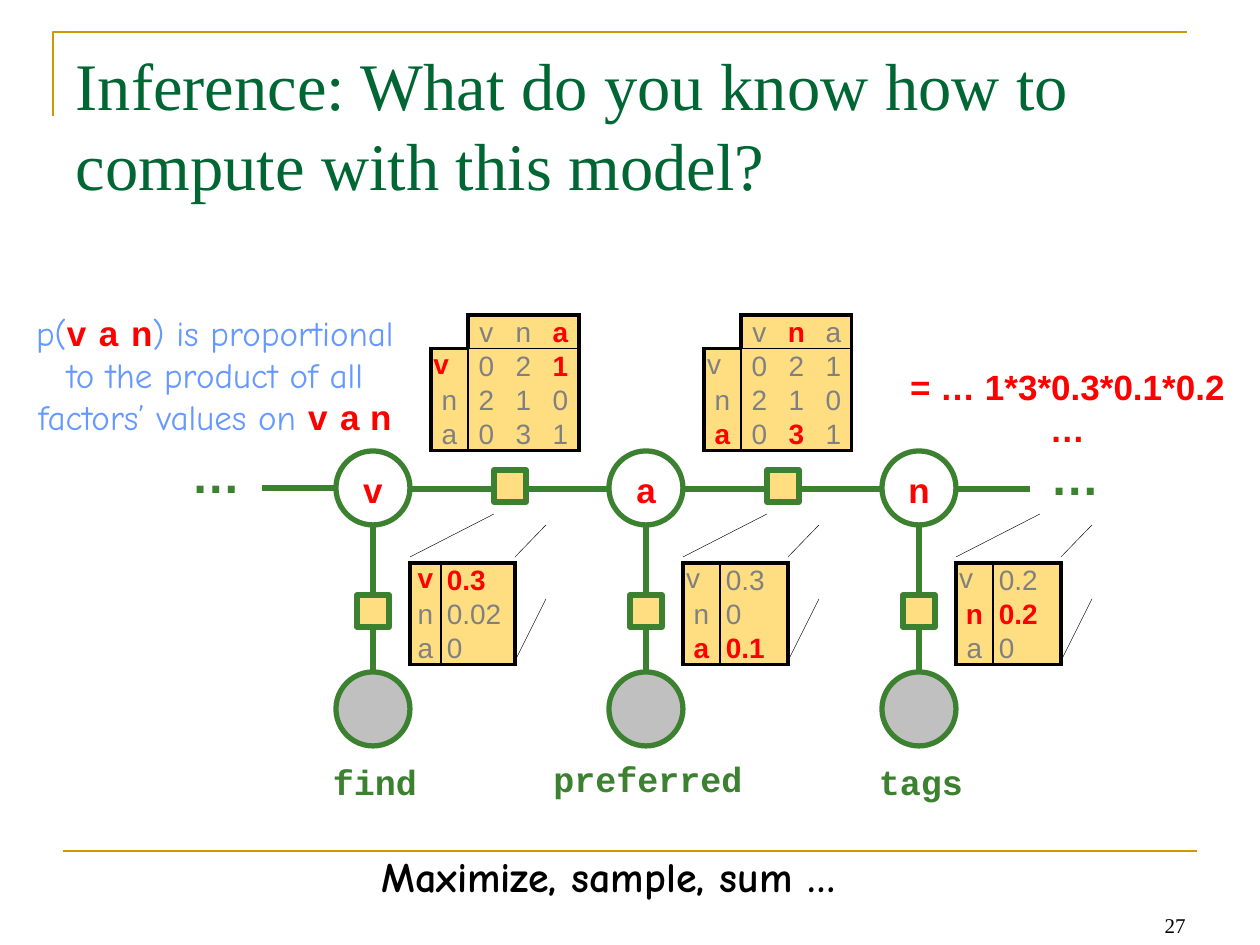
import pptx
import pptx.util
import pptx.dml.color
import pptx.enum.shapes
import pptx.enum.text
import pptx.oxml

PX = 914400 // 126
GREEN, YELLOW, GOLD, RED = "3B812F", "FFDE81", "CC9900", "FF0000"
GRAY, BLUE, BLACK = "808080", "6699FF", "000000"
SANS, MONO, HAND, SERIF = "Arial", "Courier New", "Comic Neue", "Times New Roman"
SHAPE = pptx.enum.shapes.MSO_SHAPE
ALIGN = pptx.enum.text.PP_ALIGN
ANCHOR = pptx.enum.text.MSO_ANCHOR
MARGINS = ("margin_left", "margin_top", "margin_right", "margin_bottom")
NAMESPACE = "http://schemas.openxmlformats.org/drawingml/2006/main"
COLUMN_STEP = 273


def px(*lengths):
    return [length * PX for length in lengths]


def rgb(color):
    return pptx.dml.color.RGBColor.from_string(color)


def write(para, spans, align=ALIGN.CENTER):
    """Fill a paragraph with (text, size, font, color, bold) spans."""
    para.alignment = align
    para.line_spacing = pptx.util.Pt(1.2 * max(span[1] for span in spans))
    for text, size, font, color, bold in spans:
        if text == "\n":
            para.add_line_break()
            continue
        span = para.add_run()
        span.text = text
        values = {"size": pptx.util.Pt(size), "name": font, "bold": bold}
        for name, value in values.items():
            setattr(span.font, name, value)
        span.font.color.rgb = rgb(color)


def add_text(page, box, paragraphs, wrap=False, align=ALIGN.CENTER, anchor=ANCHOR.TOP):
    frame = page.shapes.add_textbox(*px(*box)).text_frame
    frame.word_wrap = wrap
    frame.vertical_anchor = anchor
    for index, spans in enumerate(paragraphs):
        para = frame.add_paragraph() if index else frame.paragraphs[0]
        write(para, spans, align)
    return frame


def add_line(page, start, end, color=GREEN, width=3):
    line = page.shapes.add_connector(
        pptx.enum.shapes.MSO_CONNECTOR.STRAIGHT, *px(*start, *end))
    line.line.color.rgb = rgb(color)
    line.line.width = pptx.util.Pt(width)
    line._element.spPr.append(
        pptx.oxml.parse_xml(f'<a:effectLst xmlns:a="{NAMESPACE}"/>'))


def add_node(page, kind, left, top, size, fill=None):
    node = page.shapes.add_shape(kind, *px(left, top, size, size))
    node.shadow.inherit = False
    node.line.color.rgb = rgb(GREEN)
    node.line.width = pptx.util.Pt(3)
    if fill:
        node.fill.solid()
        node.fill.fore_color.rgb = rgb(fill)
    else:
        node.fill.background()


def set_border(cell, side, width):
    paint = f'<a:solidFill><a:srgbClr val="{BLACK}"/></a:solidFill>' if width else "<a:noFill/>"
    cell._tc.get_or_add_tcPr().append(pptx.oxml.parse_xml(
        f'<a:ln{side} xmlns:a="{NAMESPACE}" w="{int(width * 12700)}">{paint}</a:ln{side}>'))


def factor_table(page, left, top, widths, rows, hot, header, align, inset):
    """Table of factor values; cells in hot are red, None cells stay empty."""
    heights = [33] + [34] * (len(rows) - 1)
    table = page.shapes.add_table(
        len(rows), len(widths), *px(left, top, sum(widths), sum(heights))).table
    table.first_row = table.horz_banding = False
    for column, width in zip(table.columns, widths):
        column.width = width * PX
    for row, height in zip(table.rows, heights):
        row.height = height * PX

    def filled(r, c):
        return 0 <= r < len(rows) and 0 <= c < len(widths) and rows[r][c] is not None

    def border_width(r, c, r2, c2):
        if filled(r, c) != filled(r2, c2):
            return 2.25
        label_edge = {c, c2} == {0, 1} or (header and {r, r2} == {0, 1})
        return 1 if filled(r, c) and label_edge else 0

    for r, values in enumerate(rows):
        for c, text in enumerate(values):
            cell = table.cell(r, c)
            for name in MARGINS:
                setattr(cell, name, 0)
            cell.vertical_anchor = ANCHOR.MIDDLE
            if c:
                cell.margin_left = inset * PX
            for side, r2, c2 in (("L", r, c - 1), ("R", r, c + 1),
                                 ("T", r - 1, c), ("B", r + 1, c)):
                set_border(cell, side, border_width(r, c, r2, c2))
            para = cell.text_frame.paragraphs[0]
            if text is None:
                # A small end mark keeps the empty corner from stretching its row
                para._p.append(pptx.oxml.parse_xml(
                    f'<a:endParaRPr xmlns:a="{NAMESPACE}" sz="1200"/>'))
                cell.fill.background()
                continue
            style = (RED, True) if (r, c) in hot else (GRAY, False)
            spans = [(text.strip(), 16, SANS, *style)]
            if text == "v ":
                spans.append((" ", 16, MONO, *style))
            write(para, spans, align if c else ALIGN.CENTER)
            cell.fill.solid()
            cell.fill.fore_color.rgb = rgb(YELLOW)


def transition(page, left, hot):
    """Square factor on the chain with its table above."""
    add_node(page, SHAPE.RECTANGLE, left + 158, 470, 32, YELLOW)
    rows = [(None, "v", "n", "a"), ("v ", "0", "2", "1"),
            ("n", "2", "1", "0"), ("a", "0", "3", "1")]
    factor_table(page, left + 95, 315, [37] * 4, rows, hot, True, ALIGN.CENTER, 0)


def tag_column(page, left, tag, word, label_width, label_top, label_column, values):
    """Tag variable, its word, and the factor between them."""
    middle = left + 37
    add_node(page, SHAPE.OVAL, left, 451, 74)
    add_node(page, SHAPE.OVAL, left, 672, 74, "C0C0C0")
    for bottom in (672, 596):
        add_line(page, (middle, 524), (middle, bottom))
    add_node(page, SHAPE.RECTANGLE, left + 21, 595, 32, YELLOW)
    # Fan lines around the factor table
    for start, end in (((74, 557), (158, 514)), ((179, 557), (210, 525)),
                       ((179, 661), (210, 599))):
        add_line(page, (left + start[0], start[1]), (left + end[0], end[1]), BLACK, 0.25)
    add_text(page, (middle - 23, 462, 46, 54), [[(tag, 20, SANS, RED, True)]])
    add_text(page, (left + 39 - label_width // 2, label_top, label_width, 54),
             [[(word, 20, MONO, GREEN, True)]])
    rows = list(zip(("v ", "n", "a"), values))
    hot_row = "vna".index(tag)
    factor_table(page, left + 74, 563, (label_column, 105 - label_column), rows,
                 {(hot_row, 0), (hot_row, 1)}, False, ALIGN.LEFT, 6)


def chain(page, left):
    columns = [("v", "find", 114, 754, 31, ("0.3", "0.02", "0")),
               ("a", "preferred", 224, 751, 37, ("0.3", "0", "0.1")),
               ("n", "tags", 114, 754, 37, ("0.2", "0.2", "0"))]
    add_line(page, (left, 488), (left - 74, 488))
    for index, column in enumerate(columns):
        start = left + index * COLUMN_STEP
        length = 199 if index < 2 else 74
        add_line(page, (start + 74, 489), (start + 74 + length, 489))
        tag_column(page, start, *column)
    transition(page, left, {(0, 3), (1, 0), (1, 3)})
    transition(page, left + COLUMN_STEP, {(0, 2), (3, 0), (3, 2)})
    for dots_left, dots_top in ((179, 438), (1038, 440)):
        add_text(page, (dots_left, dots_top, 74, 72), [[("…", 28, SANS, GREEN, True)]])


def frame_and_title(page):
    # Corner rule and footer rule
    builder = page.shapes.build_freeform(53, 116, scale=PX)
    builder.add_line_segments([(53, 32), (1187, 32)], close=False)
    corner = builder.convert_to_shape()
    corner.shadow.inherit = False
    corner.fill.background()
    corner.line.color.rgb = rgb(GOLD)
    corner.line.width = pptx.util.Pt(1.5)
    add_line(page, (63, 851), (1197, 851), GOLD, 1.5)
    add_text(page, (1103, 881, 95, 63), [[("27", 12, SERIF, BLACK, False)]],
             True, ALIGN.RIGHT, ANCHOR.BOTTOM)
    # Title
    title = page.shapes.title
    title.left, title.top, title.width, title.height = px(63, 38, 1176, 158)
    title.text_frame.auto_size = pptx.enum.text.MSO_AUTO_SIZE.NONE
    title.text_frame.vertical_anchor = ANCHOR.TOP
    write(title.text_frame.paragraphs[0],
          [("Inference: What do you know how to compute with this model?",
            38, SERIF, "006633", False)], ALIGN.LEFT)


def notes_around_chain(page):
    def hand(text):
        return (text, 20, HAND, BLUE, False)

    def assignment(last_gap):
        gaps = (12, last_gap)
        spans = [("v", 20, SANS, RED, True)]
        for gap, tag in zip(gaps, "an"):
            spans += [(" ", gap, MONO, RED, True), (tag, 20, SANS, RED, True)]
        return spans

    add_text(page, (-42, 305, 514, 139), [
        [hand("p("), *assignment(12), hand(") is proportional"),
         hand("\n"), hand("to the product of all")],
        [hand("factors’ values on "), *assignment(10)]], True)
    product = add_text(page, (876, 359, 383, 54),
                       [[("= … 1*3*0.3*0.1*0.2 …", 20, SANS, RED, True)]], True)
    product.margin_left = product.margin_right = 16 * PX
    add_text(page, (338, 844, 541, 113),
             [[("Maximize, sample, sum …", 24, HAND, BLACK, True)]])


def main():
    deck = pptx.Presentation()
    deck.slide_width, deck.slide_height = px(1260, 945)
    page = deck.slides.add_slide(deck.slide_layouts[5])
    frame_and_title(page)
    chain(page, 336)
    notes_around_chain(page)
    deck.save("out.pptx")


if __name__ == "__main__":
    main()
